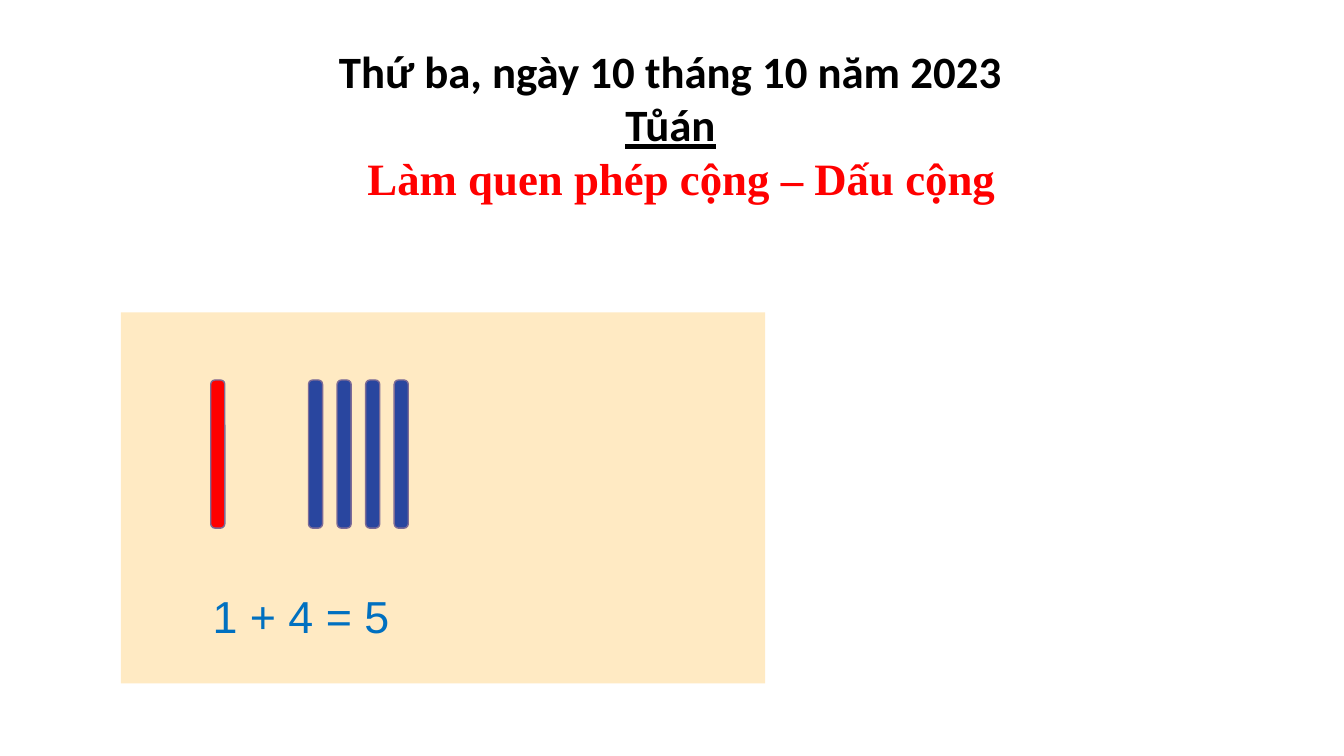
from pptx import Presentation
from pptx.dml.color import RGBColor
from pptx.enum.shapes import MSO_SHAPE as Shape
from pptx.enum.text import MSO_ANCHOR as Anchor, MSO_AUTO_SIZE as AutoSize, PP_ALIGN as Align
from pptx.util import Inches, Pt

COLORS = {
    "text": "000000",
    "lesson": "FF0000",
    "panel": "FFEAC3",
    "red_stick": "FF0000",
    "blue_stick": "29469F",
    "stick_line": "7D6B96",
    "sum": "0070C0",
}
HEADING = [
    # text, font, color, underline, left indent in inches
    ("Thứ ba, ngày 10 tháng 10 năm 2023", "Calibri", "text", False, 0),
    ("Tůán", "Calibri", "text", True, 0),
    ("Làm quen phép cộng – Dấu cộng", "Times New Roman", "lesson", False, 0.22),
]
BLUE_STICKS = 4
BLUE_PITCH = 0.85 / (BLUE_STICKS - 1)


def color(name):
    return RGBColor.from_string(COLORS[name])


def add_heading(slide, left, top, width, height):
    title = slide.shapes.title
    title.left, title.top = Inches(left), Inches(top)
    title.width, title.height = Inches(width), Inches(height)
    frame = title.text_frame
    frame.vertical_anchor = Anchor.TOP
    frame.auto_size = AutoSize.NONE
    frame.text = "\n".join(line[0] for line in HEADING)
    for paragraph, (_, font_name, color_name, underline, indent) in zip(frame.paragraphs, HEADING):
        paragraph.alignment = Align.CENTER
        paragraph._p.get_or_add_pPr().set("marL", str(Inches(indent)))
        font = paragraph.font
        font.name, font.size, font.bold = font_name, Pt(32), True
        font.underline = underline
        font.color.rgb = color(color_name)


def add_block(group, kind, fill, left, top, width, height):
    shape = group.shapes.add_shape(kind, Inches(left), Inches(top), Inches(width), Inches(height))
    shape.shadow.inherit = False
    shape.fill.solid()
    shape.fill.fore_color.rgb = color(fill)
    shape.line.fill.background()
    return shape


def add_stick(group, fill, left, top):
    stick = add_block(group, Shape.ROUNDED_RECTANGLE, fill, left, top, 0.14, 1.47)
    stick.adjustments[0] = 0.31
    stick.line.color.rgb = color("stick_line")
    stick.line.width = Pt(1)


def add_counting_panel(slide, left, top, width, height):
    """Sticks to count, with their sum written below."""
    group = slide.shapes.add_group_shape()
    add_block(group, Shape.RECTANGLE, "panel", left, top, width, height)

    stick_top = top + 0.67
    add_stick(group, "red_stick", left + 0.89, stick_top)
    for index in range(BLUE_STICKS):
        add_stick(group, "blue_stick", left + 1.86 + index * BLUE_PITCH, stick_top)

    box = group.shapes.add_textbox(Inches(left + 0.81), Inches(top + 2.69), Inches(2.39), Inches(0.64))
    frame = box.text_frame
    frame.word_wrap = True
    frame.text = "1 + 4 = 5"
    font = frame.paragraphs[0].font
    font.name, font.size = "Arial", Pt(32)
    font.color.rgb = color("sum")


def main():
    presentation = Presentation()
    presentation.slide_width, presentation.slide_height = Inches(13.33), Inches(7.5)
    title_only = presentation.slide_layouts[5]
    slide = presentation.slides.add_slide(title_only)
    add_counting_panel(slide, 1.2, 3.1, 6.39, 3.68)
    add_heading(slide, 1.65, 0.38, 10, 1.72)
    presentation.save("out.pptx")


if __name__ == "__main__":
    main()
